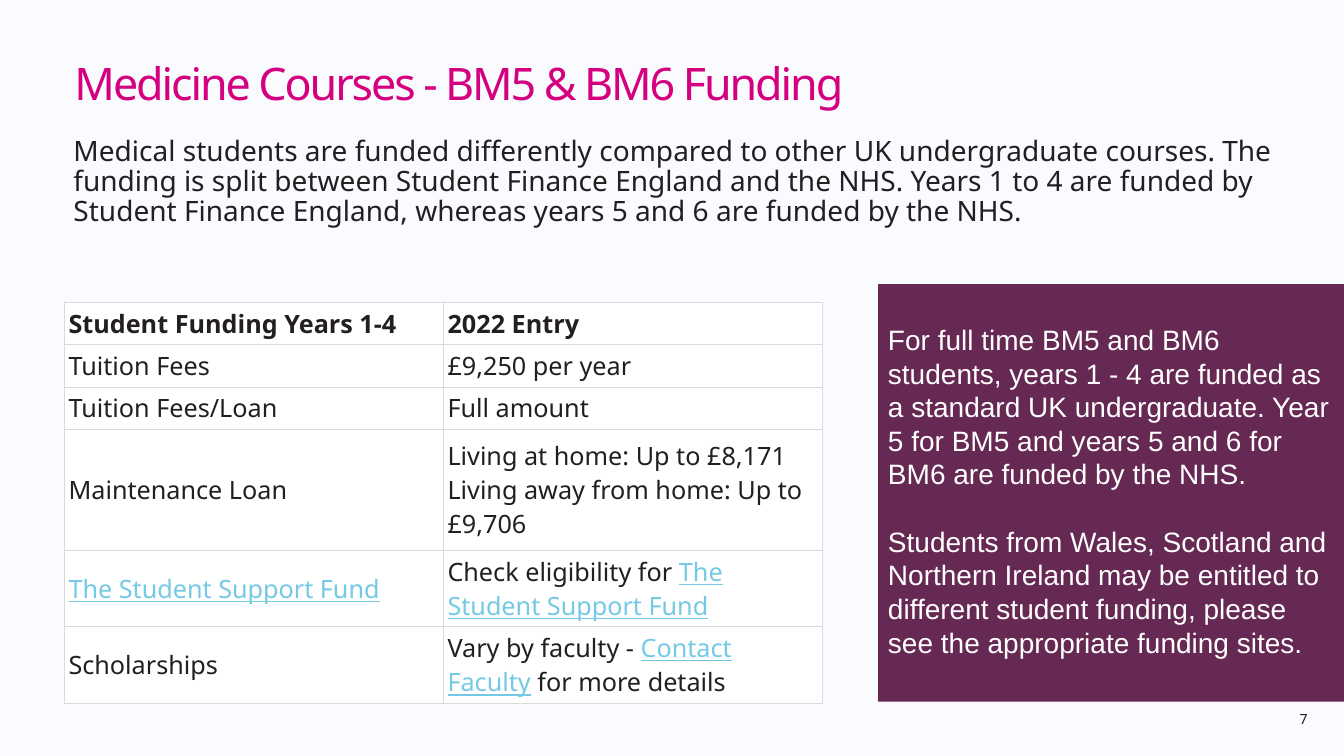
import lxml.etree
import pptx
import pptx.dml.color
import pptx.enum.shapes
import pptx.enum.text
import pptx.oxml.ns
import pptx.util

RGBColor = pptx.dml.color.RGBColor
BACKGROUND = RGBColor(0xF9, 0xFB, 0xFF)
INK = RGBColor(0x23, 0x1F, 0x20)
MAGENTA = RGBColor(0xD5, 0x00, 0x7F)
PLUM = RGBColor(0x66, 0x29, 0x53)
WHITE = RGBColor(0xFF, 0xFF, 0xFF)
LINK_BLUE = RGBColor(0x74, 0xC9, 0xE5)
BORDER_GREY = RGBColor(0xDA, 0xDA, 0xDA)

ANCHOR = pptx.enum.text.MSO_ANCHOR
ALIGN = pptx.enum.text.PP_ALIGN

deck = pptx.Presentation()
deck.slide_width = pptx.util.Inches(13.333)
deck.slide_height = pptx.util.Inches(7.5)
page = deck.slides.add_slide(deck.slide_layouts[6])
page.background.fill.solid()
page.background.fill.fore_color.rgb = BACKGROUND


def share(left, top, width, height):
    """Turn percentages of the slide's width and height into lengths."""
    across, down = deck.slide_width / 100, deck.slide_height / 100
    return [int(left * across), int(top * down), int(width * across), int(height * down)]


def write(frame, paragraphs, size, color, name="Noto Sans", bold=False, **layout):
    """Fill a frame; each paragraph is a list of (text, is_link) spans."""
    frame.word_wrap = True
    for index, spans in enumerate(paragraphs):
        para = frame.paragraphs[0] if index == 0 else frame.add_paragraph()
        for key, value in layout.items():
            if key != "space_before" or index > 0:
                setattr(para, key, value)
        for text, is_link in spans:
            span = para.add_run()
            span.text = text
            font_format = {"name": name, "size": pptx.util.Pt(size),
                           "bold": bold, "underline": is_link}
            for key, value in font_format.items():
                setattr(span.font, key, value)
            span.font.color.rgb = LINK_BLUE if is_link else color


# Title
title = page.shapes.add_textbox(*share(4.8, 7.2, 64.35, 7.33)).text_frame
title_format = {"vertical_anchor": ANCHOR.BOTTOM, "margin_top": 0, "margin_bottom": 0}
for key, value in title_format.items():
    setattr(title, key, value)
write(title, [[("Medicine Courses - BM5 & BM6 Funding", False)]], 32, MAGENTA)
title.paragraphs[0].runs[0].font._element.set("spc", "-150")

# Introduction
introduction = page.shapes.add_textbox(*share(4.73, 17.47, 93.67, 14.8))
write(introduction.text_frame, [[(
    "Medical students are funded differently compared to other UK undergraduate courses. "
    "The funding is split between Student Finance England and the NHS. Years 1 to 4 are "
    "funded by Student Finance England, whereas years 5 and 6 are funded by the NHS.",
    False)]], 20, INK, line_spacing=0.9)

# Funding table
SUPPORT_FUND = ("The Student Support Fund", True)
funding_rows = [
    (5.6, [[("Student Funding Years 1-4", False)]], [[("2022 Entry", False)]]),
    (5.6, [[("Tuition Fees", False)]], [[("£9,250 per year", False)]]),
    (5.6, [[("Tuition Fees/Loan", False)]], [[("Full amount", False)]]),
    (16, [[("Maintenance Loan", False)]],
     [[("Living at home: Up to £8,171", False)],
      [("Living away from home: Up to £9,706", False)]]),
    (10.1, [[SUPPORT_FUND]], [[("Check eligibility for ", False), SUPPORT_FUND]]),
    (10.1, [[("Scholarships", False)]],
     [[("Vary by faculty - ", False), ("Contact Faculty", True),
       (" for more details", False)]]),
]
table_height = sum(row[0] for row in funding_rows)
table = page.shapes.add_table(len(funding_rows), 2,
                              *share(4.8, 40, 56.4, table_height)).table
table.first_row = table.horz_banding = False
cell_format = {"vertical_anchor": ANCHOR.MIDDLE}
for side in ("left", "right", "top", "bottom"):
    cell_format["margin_" + side] = pptx.util.Inches(0.04)

for row_index, (height, *contents) in enumerate(funding_rows):
    table.rows[row_index].height = int(deck.slide_height * height / 100)
    for column_index, paragraphs in enumerate(contents):
        cell = table.cell(row_index, column_index)
        for key, value in cell_format.items():
            setattr(cell, key, value)
        write(cell.text_frame, paragraphs, 18, INK, bold=row_index == 0)
        properties = cell._tc.get_or_add_tcPr()
        for edge in ("a:lnL", "a:lnR", "a:lnT", "a:lnB"):
            line = lxml.etree.SubElement(properties, pptx.oxml.ns.qn(edge),
                                         w=str(pptx.util.Pt(0.5)))
            paint = lxml.etree.SubElement(line, pptx.oxml.ns.qn("a:solidFill"))
            lxml.etree.SubElement(paint, pptx.oxml.ns.qn("a:srgbClr"), val=str(BORDER_GREY))
        cell.fill.solid()
        cell.fill.fore_color.rgb = WHITE

# Side panel
panel = page.shapes.add_shape(pptx.enum.shapes.MSO_SHAPE.RECTANGLE,
                              *share(65.33, 37.6, 34.67, 55.2))
panel.shadow.inherit = False
panel.fill.solid()
panel.fill.fore_color.rgb = PLUM
panel.line.fill.background()
panel.text_frame.vertical_anchor = ANCHOR.TOP
panel.text_frame.margin_top = pptx.util.Inches(0.38)
write(panel.text_frame, [
    [("For full time BM5 and BM6 students, years 1 - 4 are funded as a standard UK "
      "undergraduate. Year 5 for BM5 and years 5 and 6 for BM6 are funded by the NHS.", False)],
    [("Students from Wales, Scotland and Northern Ireland may be entitled to different "
      "student funding, please see the appropriate funding sites.", False)],
], 20, WHITE, name="Arial", alignment=ALIGN.LEFT,
    line_spacing=pptx.util.Pt(24), space_before=pptx.util.Pt(24))

# Page number
number = page.shapes.add_textbox(*share(90.15, 93.33, 7.88, 3.6))
write(number.text_frame, [[("7", False)]], 10, INK, alignment=ALIGN.RIGHT)

deck.save("out.pptx")
